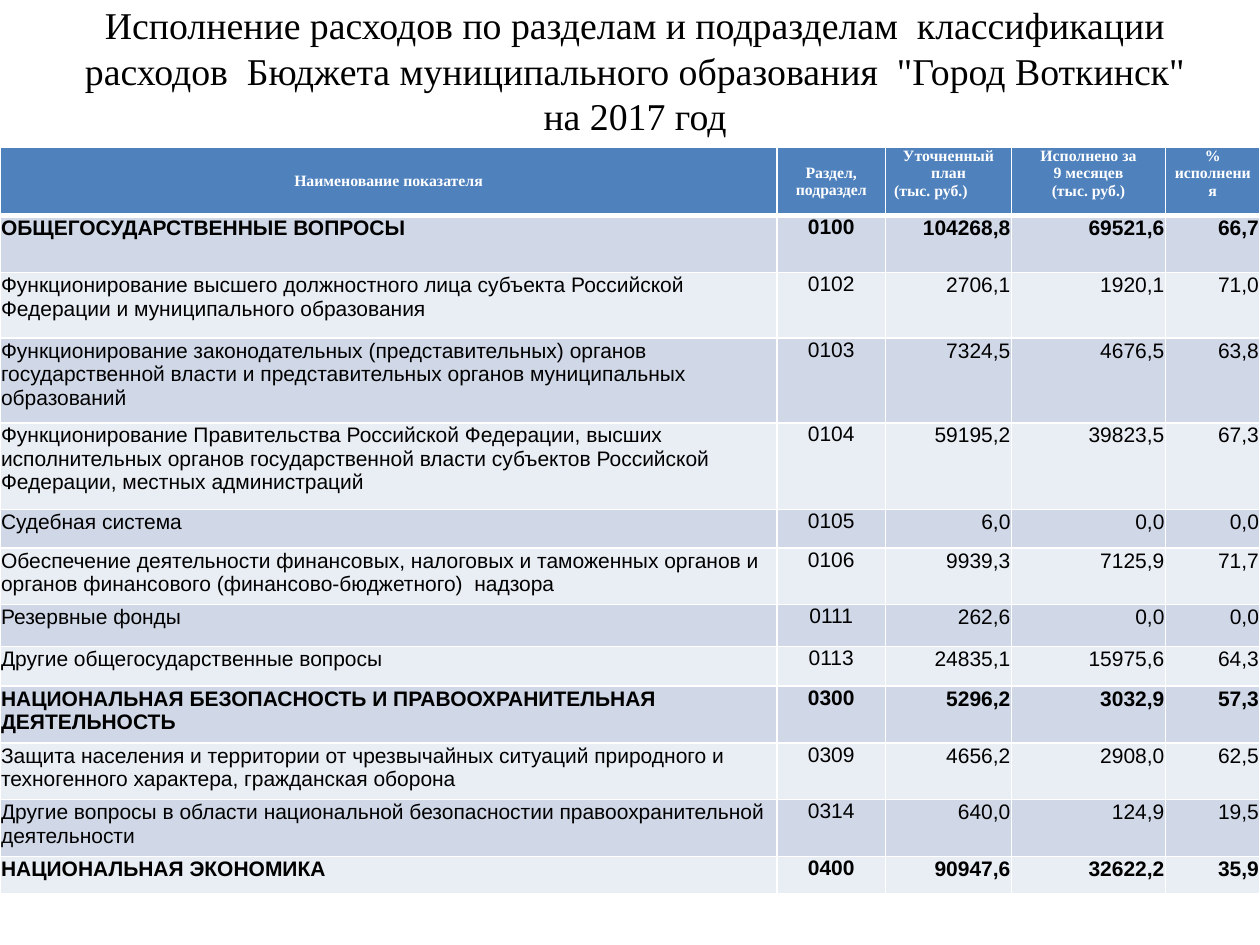
from lxml import etree
from pptx import Presentation
from pptx.dml.color import RGBColor
from pptx.enum.text import MSO_ANCHOR, PP_ALIGN
from pptx.oxml.ns import qn
from pptx.util import Pt

LEFT, CENTER, RIGHT = PP_ALIGN.LEFT, PP_ALIGN.CENTER, PP_ALIGN.RIGHT
TOP, MIDDLE = MSO_ANCHOR.TOP, MSO_ANCHOR.MIDDLE

COLORS = {"header": "4F81BD", "odd": "D0D8E8", "even": "E9EDF4",
          "white": "FFFFFF", "black": "000000"}
TITLE_FONT = {"name": "Times New Roman", "size": Pt(21.6), "bold": False}
HEADER_FONT = {"name": "Times New Roman", "size": Pt(9), "bold": True}
BODY_FONT = {"name": "Arial", "size": Pt(12)}

TITLE = ('Исполнение расходов по разделам и подразделам  классификации расходов  '
         'Бюджета муниципального образования  "Город Воткинск" на 2017 год')
COL_WIDTHS = [444, 62, 72, 88, 54]
HEADER_HEIGHT = 39
HEADERS = [  # anchor, lines
    (MIDDLE, ["Наименование показателя"]),
    (MIDDLE, ["Раздел,", "подраздел"]),
    (TOP, ["Уточненный план", "(тыс. руб.)"]),
    (TOP, ["Исполнено за", "9 месяцев", "(тыс. руб.)"]),
    (TOP, ["% исполнения"]),
]
ROWS = [  # height, name, code, plan, executed, percent
    (32.5, "ОБЩЕГОСУДАРСТВЕННЫЕ ВОПРОСЫ", "0100", "104268,8", "69521,6", "66,7"),
    (37.5, "Функционирование высшего должностного лица субъекта Российской Федерации "
     "и муниципального образования", "0102", "2706,1", "1920,1", "71,0"),
    (48.5, "Функционирование законодательных (представительных) органов государственной "
     "власти и представительных органов муниципальных  образований",
     "0103", "7324,5", "4676,5", "63,8"),
    (49.5, "Функционирование Правительства Российской Федерации, высших  исполнительных "
     "органов государственной власти субъектов Российской Федерации, местных администраций",
     "0104", "59195,2", "39823,5", "67,3"),
    (22, "Судебная система", "0105", "6,0", "0,0", "0,0"),
    (32.5, "Обеспечение деятельности финансовых, налоговых и таможенных органов и органов "
     "финансового (финансово-бюджетного)  надзора", "0106", "9939,3", "7125,9", "71,7"),
    (24, "Резервные фонды", "0111", "262,6", "0,0", "0,0"),
    (22.5, "Другие общегосударственные вопросы", "0113", "24835,1", "15975,6", "64,3"),
    (32.5, "НАЦИОНАЛЬНАЯ БЕЗОПАСНОСТЬ И ПРАВООХРАНИТЕЛЬНАЯ ДЕЯТЕЛЬНОСТЬ",
     "0300", "5296,2", "3032,9", "57,3"),
    (32.5, "Защита населения и территории от чрезвычайных ситуаций природного и "
     "техногенного характера, гражданская оборона", "0309", "4656,2", "2908,0", "62,5"),
    (32.5, "Другие вопросы в области национальной безопасностии правоохранительной "
     "деятельности", "0314", "640,0", "124,9", "19,5"),
    (21.5, "НАЦИОНАЛЬНАЯ ЭКОНОМИКА", "0400", "90947,6", "32622,2", "35,9"),
]


def add_text(p, text, font, color, align):
    p.alignment = align
    r = p.add_run()
    r.text = text
    for name, value in font.items():
        setattr(r.font, name, value)
    r.font.color.rgb = RGBColor.from_string(COLORS[color])


def format_cell(cell, fill, margins, bottom=1):
    for side, value in zip(("left", "top", "right", "bottom"), margins):
        setattr(cell, "margin_" + side, Pt(value))
    tcPr = cell._tc.get_or_add_tcPr()
    for tag, width in (("lnL", 1), ("lnR", 1), ("lnT", 1), ("lnB", bottom)):
        ln = etree.SubElement(tcPr, qn("a:" + tag), w=str(Pt(width)))
        solid = etree.SubElement(ln, qn("a:solidFill"))
        etree.SubElement(solid, qn("a:srgbClr"), val=COLORS["white"])
    cell.fill.solid()
    cell.fill.fore_color.rgb = RGBColor.from_string(COLORS[fill])


prs = Presentation()
prs.slide_width, prs.slide_height = Pt(720), Pt(540)
slide = prs.slides.add_slide(prs.slide_layouts[5])

# Title
sp = slide.shapes.title
sp.left, sp.top, sp.width, sp.height = Pt(39.6), Pt(0), Pt(646.6), Pt(106.6)
tf = sp.text_frame
tf.word_wrap = True
tf.vertical_anchor = TOP
tf.margin_left = tf.margin_right = Pt(4)
tf.margin_top, tf.margin_bottom = Pt(1), Pt(0)
tf.paragraphs[0].line_spacing = Pt(26)
add_text(tf.paragraphs[0], TITLE, TITLE_FONT, "black", CENTER)

# Table grid
heights = [HEADER_HEIGHT] + [row[0] for row in ROWS]
table = slide.shapes.add_table(len(heights), len(COL_WIDTHS), Pt(0), Pt(84.2),
                               Pt(sum(COL_WIDTHS)), Pt(sum(heights))).table
for column, width in zip(table.columns, COL_WIDTHS):
    column.width = Pt(width)
for row, height in zip(table.rows, heights):
    row.height = Pt(height)

# Header row
for c, (anchor, lines) in enumerate(HEADERS):
    cell = table.cell(0, c)
    format_cell(cell, "header", (5, 0, 5, 0), bottom=3)
    cell.vertical_anchor = anchor
    tf = cell.text_frame
    for i, line in enumerate(lines):
        p = tf.add_paragraph() if i else tf.paragraphs[0]
        align = LEFT if c == 2 and i == 1 else CENTER
        add_text(p, line, HEADER_FONT, "white", align)

# Body rows: section codes end in 00 and are bold
aligns = [LEFT, CENTER, RIGHT, RIGHT, RIGHT]
for r, (_, *values) in enumerate(ROWS, start=1):
    font = {**BODY_FONT, "bold": values[1].endswith("00")}
    for c, (value, align) in enumerate(zip(values, aligns)):
        cell = table.cell(r, c)
        margins = (5, 0, 5, 0) if c == 1 else (0.6, 0.6, 0.6, 0)
        format_cell(cell, "odd" if r % 2 else "even", margins)
        add_text(cell.text_frame.paragraphs[0], value, font, "black", align)

prs.save("out.pptx")
